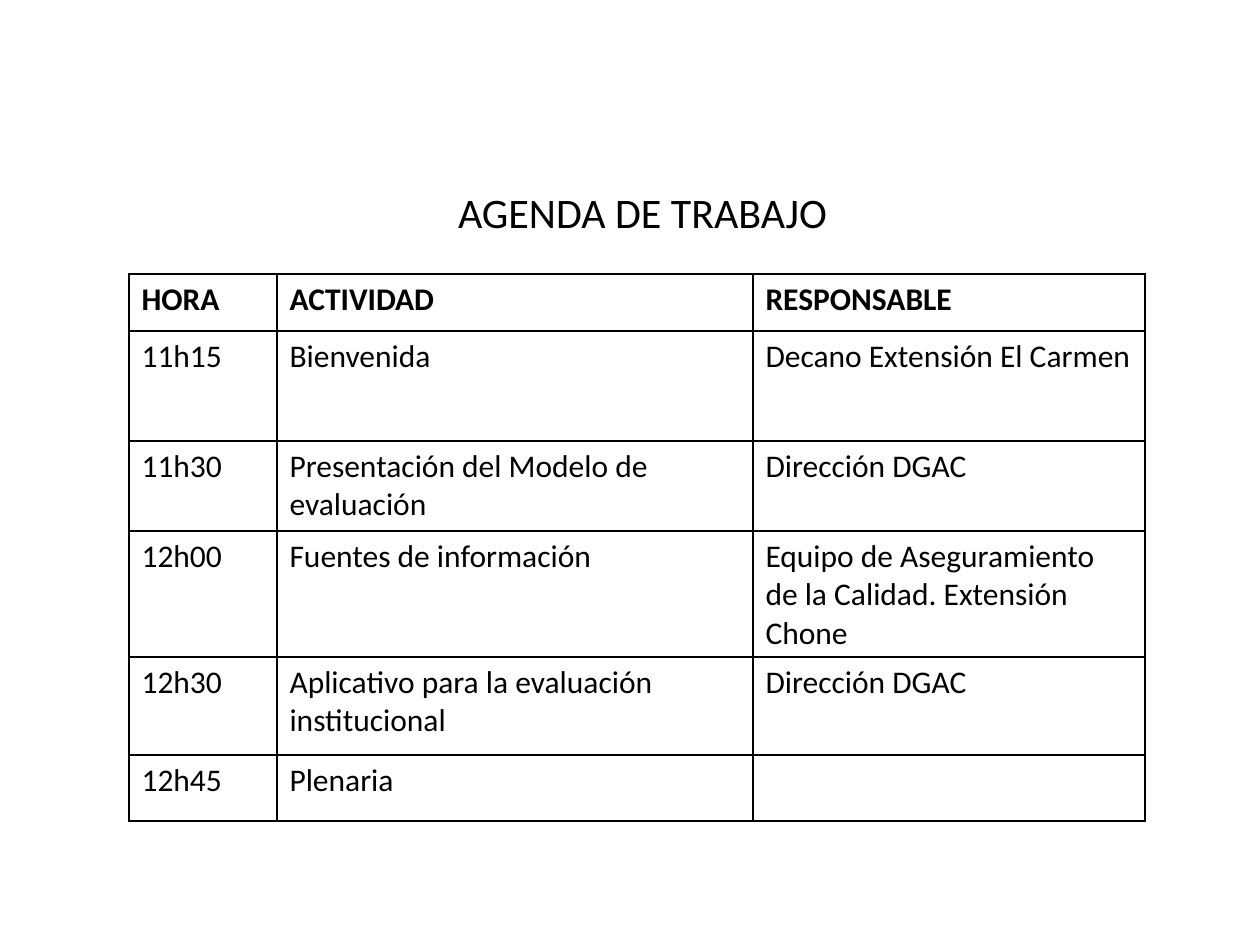
import pptx
import pptx.dml.color
import pptx.enum.text
import pptx.oxml
import pptx.oxml.ns
import pptx.util

PX_PER_INCH = 126
FONT = "Calibri"
BLACK = "000000"
COLUMN_WIDTHS = [148, 476, 392]
ROW_HEIGHTS = [57, 110, 90, 126, 98, 66]
AGENDA = [
    ["HORA", "ACTIVIDAD", "RESPONSABLE"],
    ["11h15", "Bienvenida", "Decano Extensión El Carmen"],
    ["11h30", "Presentación del Modelo de evaluación", "Dirección DGAC"],
    ["12h00", "Fuentes de información",
     "Equipo de Aseguramiento de la Calidad. Extensión Chone"],
    ["12h30", "Aplicativo para la evaluación institucional", "Dirección DGAC"],
    ["12h45", "Plenaria", ""],
]


def px(length):
    return pptx.util.Emu(round(length * 914400 / PX_PER_INCH))


def color(value):
    return pptx.dml.color.RGBColor.from_string(value)


def format_text(frame, size, bold=False):
    for para in frame.paragraphs:
        for span in para.runs:
            span.font.name = FONT
            span.font.size = pptx.util.Pt(size)
            span.font.bold = bold
            span.font.color.rgb = color(BLACK)


def add_borders(cell):
    properties = cell._tc.get_or_add_tcPr()
    namespace = pptx.oxml.ns.nsdecls("a")
    for side in ("lnL", "lnR", "lnT", "lnB"):
        properties.append(pptx.oxml.parse_xml(
            f'<a:{side} {namespace} w="{pptx.util.Pt(1)}"><a:solidFill>'
            f'<a:srgbClr val="{BLACK}"/></a:solidFill></a:{side}>'))


def add_title(page, left, top, width, height):
    box = page.shapes.add_textbox(px(left), px(top), px(width), px(height))
    frame = box.text_frame
    frame.word_wrap = True
    frame.auto_size = pptx.enum.text.MSO_AUTO_SIZE.SHAPE_TO_FIT_TEXT
    frame.text = "AGENDA DE TRABAJO"
    frame.paragraphs[0].alignment = pptx.enum.text.PP_ALIGN.CENTER
    format_text(frame, 24)


def add_agenda(page, left, top):
    table = page.shapes.add_table(
        len(ROW_HEIGHTS), len(COLUMN_WIDTHS), px(left), px(top),
        px(sum(COLUMN_WIDTHS)), px(sum(ROW_HEIGHTS))).table
    table.first_row = False
    table.horz_banding = False
    for column, width in zip(table.columns, COLUMN_WIDTHS):
        column.width = px(width)
    for index, (row, height) in enumerate(zip(table.rows, ROW_HEIGHTS)):
        row.height = px(height)
        for cell, text in zip(row.cells, AGENDA[index]):
            add_borders(cell)
            cell.fill.background()
            cell.text_frame.text = text
            format_text(cell.text_frame, 18, bold=index == 0)


def main():
    deck = pptx.Presentation()
    deck.slide_width = px(1260)
    deck.slide_height = px(945)
    page = deck.slides.add_slide(deck.slide_layouts[6])
    add_title(page, 129, 180, 1027, 63)
    add_agenda(page, 129, 274)
    deck.save("out.pptx")


if __name__ == "__main__":
    main()
